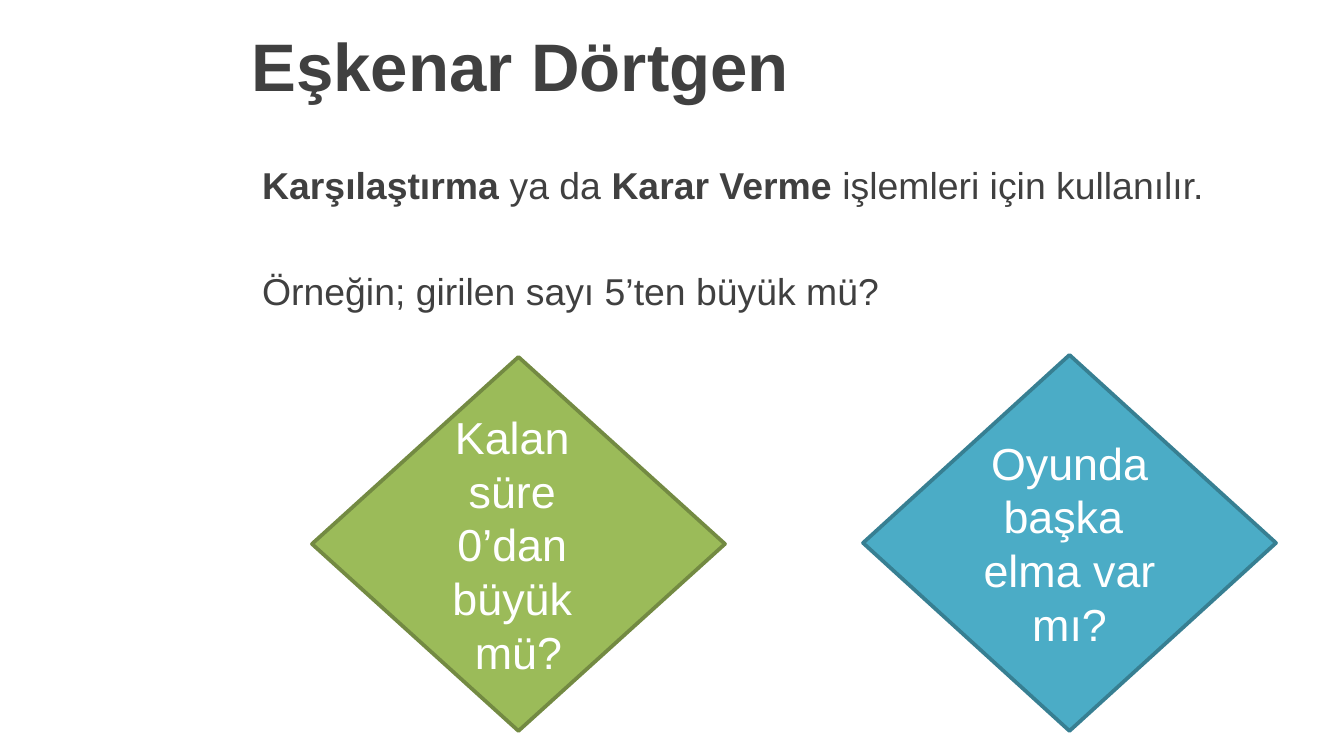
"""Build a slide on the diamond, the decision symbol of flowcharts."""
import pptx
import pptx.dml.color
import pptx.enum.shapes
import pptx.enum.text
import pptx.util

PX = 914400 / 134.4
FONT = "Arial"
DARK = pptx.dml.color.RGBColor(0x40, 0x40, 0x40)
WHITE = pptx.dml.color.RGBColor(0xFF, 0xFF, 0xFF)
GREEN = pptx.dml.color.RGBColor(0x9B, 0xBB, 0x59)
DARK_GREEN = pptx.dml.color.RGBColor(0x73, 0x8A, 0x42)
TEAL = pptx.dml.color.RGBColor(0x4B, 0xAC, 0xC6)
DARK_TEAL = pptx.dml.color.RGBColor(0x37, 0x7F, 0x92)
ALIGN = pptx.enum.text.PP_ALIGN


def px(length):
    return pptx.util.Emu(round(length * PX))


def place(shape, box):
    for side, length in zip(("left", "top", "width", "height"), box):
        setattr(shape, side, px(length))


def write(shape, paragraphs, size, color, align=ALIGN.LEFT, gap=0):
    """Fill a shape with paragraphs, each a list of (text, bold) runs."""
    frame = shape.text_frame
    frame.word_wrap = True
    frame.auto_size = pptx.enum.text.MSO_AUTO_SIZE.NONE
    frame.vertical_anchor = pptx.enum.text.MSO_ANCHOR.MIDDLE
    for index, runs in enumerate(paragraphs):
        paragraph = frame.add_paragraph() if index else frame.paragraphs[0]
        paragraph.alignment = align
        if index:
            paragraph.space_before = pptx.util.Pt(gap)
        for text, bold in runs:
            for number, line in enumerate(text.split("\n")):
                if number:
                    paragraph.add_line_break()
                run = paragraph.add_run()
                run.text = line
                style = {"name": FONT, "size": pptx.util.Pt(size), "bold": bold}
                for name, value in style.items():
                    setattr(run.font, name, value)
                run.font.color.rgb = color


def add_title(slide, text, box):
    title = slide.shapes.title
    place(title, box)
    write(title, [[(text, True)]], 36, DARK)


def add_body(slide, paragraphs, box):
    body = slide.shapes.add_textbox(*map(px, box))
    write(body, paragraphs, 20, DARK, gap=33)


def add_decision(slide, question, box, fill, outline):
    decision = slide.shapes.add_shape(
        pptx.enum.shapes.MSO_SHAPE.FLOWCHART_DECISION, *map(px, box))
    decision.shadow.inherit = False
    decision.fill.solid()
    decision.fill.fore_color.rgb = fill
    decision.line.color.rgb = outline
    decision.line.width = pptx.util.Pt(2)
    write(decision, [[(question, False)]], 24, WHITE, ALIGN.CENTER)


def main():
    deck = pptx.Presentation()
    deck.slide_width, deck.slide_height = px(1344), px(756)
    slide = deck.slides.add_slide(deck.slide_layouts[5])
    add_title(slide, "Eşkenar Dörtgen", (238, 0, 1106, 130))
    add_body(slide, [
        [("Karşılaştırma", True), (" ya da ", False),
         ("Karar Verme ", True), ("işlemleri için kullanılır.", False)],
        [("Örneğin; girilen sayı 5’ten büyük mü?", False)],
    ], (249, 116, 1079, 243))
    add_decision(slide, "Kalan \nsüre \n0’dan \nbüyük \nmü?",
                 (312, 357, 413, 374), GREEN, DARK_GREEN)
    add_decision(slide, "Oyunda başka \nelma var mı?",
                 (863, 355, 413, 376), TEAL, DARK_TEAL)
    deck.save("out.pptx")


if __name__ == "__main__":
    main()
